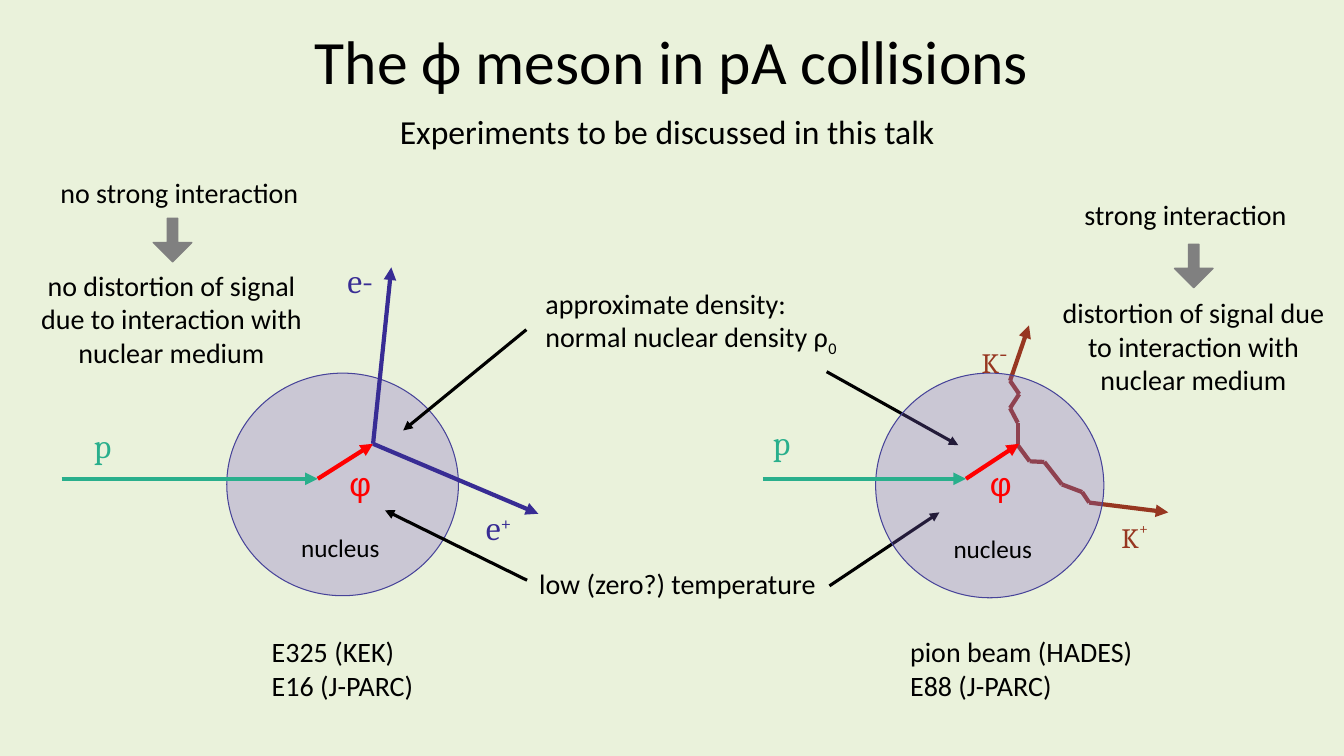
from lxml import etree
from pptx import Presentation
from pptx.dml.color import RGBColor
from pptx.enum import shapes, text
from pptx.oxml.ns import qn
from pptx.util import Pt

BLACK, RED, GRAY = "000000", "FF0000", "808080"
GREEN, BLUE, BROWN = "29AF8C", "382C94", "973721"
rgb = RGBColor.from_string

deck = Presentation()
deck.slide_width, deck.slide_height = Pt(960), Pt(540)
slide = deck.slides.add_slide(deck.slide_layouts[5])
slide.background.fill.solid()
slide.background.fill.fore_color.rgb = rgb("EAF2DB")


# Straight line, with an arrowhead at its end if wanted
def line(start, end, color, width=3, head=True):
    wire = slide.shapes.add_connector(
        shapes.MSO_CONNECTOR.STRAIGHT, *map(Pt, start + end))
    wire.line.color.rgb = rgb(color)
    wire.line.width = Pt(width)
    if head:
        tip = etree.SubElement(wire.line._get_or_add_ln(), qn("a:tailEnd"))
        tip.set("type", "triangle")
    etree.SubElement(wire._element.spPr, qn("a:effectLst"))


# Text box: each paragraph is a list of (text, size, baseline in percent)
def label(box, paras, color=BLACK, font="Calibri", wrap=True, center=False):
    frame = slide.shapes.add_textbox(*map(Pt, box)).text_frame
    frame.word_wrap = wrap
    frame.auto_size = text.MSO_AUTO_SIZE.SHAPE_TO_FIT_TEXT
    for i, runs in enumerate(paras):
        para = frame.add_paragraph() if i else frame.paragraphs[0]
        if center:
            para.alignment = text.PP_ALIGN.CENTER
        for words, size, base in runs:
            run = para.add_run()
            run.text = words
            run.font.name, run.font.size = font, Pt(size)
            run.font.color.rgb = rgb(color)
            if base:
                run.font._element.set("baseline", str(base * 1000))


# Title
title = slide.shapes.title
title.left, title.top, title.width, title.height = map(Pt, (25, 33, 910, 42))
para = title.text_frame.paragraphs[0]
para.alignment = text.PP_ALIGN.CENTER
para.line_spacing = Pt(30)
run = para.add_run()
run.text = "The ϕ meson in pA collisions"
run.font.name, run.font.size = "Calibri", Pt(44)
run.font.color.rgb = rgb(BLACK)
label((278.5, 75.5, 423, 36),
      [[("Experiments to be discussed in this talk", 24, 0)]])

# Arrows and kaon tracks that lie behind the right nucleus
line((592.5, 418.5), (671, 366), BLACK, 2.25)
line((590.5, 265.5), (684.5, 318), BLACK, 2.25)
tracks = [
    [(727, 317), (727, 302), (721.5, 291.5), (728, 281.5), (721.5, 272),
     (735, 232.5)],
    [(727, 318), (735.5, 329.5), (746, 330), (758.5, 346), (773, 351.5),
     (778, 359), (834.5, 366)],
]
for track in tracks:
    for i in range(len(track) - 1):
        line(track[i], track[i + 1], BROWN, head=i == len(track) - 2)

# Nuclei with the incoming proton and the meson
nuclei = [
    # ellipse, proton start, decay start, decay end, p, φ, name
    ((162, 266.5, 165.5, 159), 44, 227, 266.5, (60, 300), (242.5, 327),
     (208, 376.5)),
    ((625.5, 266.5, 163, 160.5), 545, 690, 728, (545, 297.5), (700, 327),
     (674, 377.5)),
]
for oval, start, hit, decay, p, phi, name in nuclei:
    ball = slide.shapes.add_shape(shapes.MSO_SHAPE.OVAL, *map(Pt, oval))
    ball.shadow.inherit = False
    ball.fill.solid()
    ball.fill.fore_color.rgb = rgb("7C60C6")
    tint = ball._element.spPr.find(qn("a:solidFill"))[0]
    etree.SubElement(tint, qn("a:alpha")).set("val", "29000")
    ball.line.color.rgb = rgb("474399")
    ball.line.width = Pt(0.75)
    line((start, 342), (hit, 342), GREEN)
    line((hit, 342), (decay, 317), RED)
    label(p + (45, 36), [[("p", 24, 0)]], GREEN, "Cambria", False)
    label(phi + (43, 36), [[("φ", 24, 0)]], RED, "Arial", False)
    label(name + (95, 27), [[("nucleus", 18, 0)]])

# Electron pair
for end in ((279.5, 191), (384.5, 367)):
    line((266.5, 317), end, BLUE)

# Particle names
names = [
    ((340, 358.5, 36.5, 36), [("e", 24, 0), ("+", 24, 30)], BLUE),
    ((241, 182, 34.5, 36), [("e-", 24, 0)], BLUE),
    ((794, 367, 47.5, 39), [("K", 20, 0), ("+", 20, 50)], BROWN),
    ((694, 231, 46, 41), [("K", 20, 0), ("-", 32, 24)], BROWN),
]
for box, runs, color in names:
    label(box, [runs], color, "Cambria", False)

# Arrows to the left nucleus
line((376.5, 414.5), (275, 364.5), BLACK, 2.25)
line((376, 235.5), (288, 307.5), BLACK, 2.25)

# Shared conditions
label((382.5, 201, 259, 55.5),
      [[("approximate density:", 20, 0)],
       [("normal nuclear density ρ", 20, 0), ("0", 20, -25)]])
label((378, 401, 259, 31.5), [[("low (zero?) temperature", 20, 0)]])

# Effect of the interaction, on each side
sides = [
    ((36, 121.5, 214.5, 31.5), "no strong interaction", (109.5, 156),
     (12.5, 188, 220, 80),
     "no distortion of signal due to interaction with nuclear medium"),
    ((767.5, 137.5, 167, 31.5), "strong interaction", (839, 174.5),
     (745, 207.5, 215, 80),
     "distortion of signal due to interaction with nuclear medium"),
]
for top, cause, spot, low, effect in sides:
    label(top, [[(cause, 20, 0)]])
    arrow = slide.shapes.add_shape(
        shapes.MSO_SHAPE.DOWN_ARROW, *map(Pt, spot + (27.5, 31)))
    arrow.shadow.inherit = False
    arrow.adjustments[0], arrow.adjustments[1] = 0.27, 0.5
    arrow.fill.solid()
    arrow.fill.fore_color.rgb = arrow.line.color.rgb = rgb(GRAY)
    arrow.line.width = Pt(1)
    label(low, [[(effect, 20, 0)]], center=True)

# Experiments
for left, width, rows in ((187, 157, ("E325 (KEK)", "E16 (J-PARC)")),
                          (643, 185, ("pion beam (HADES)", "E88 (J-PARC)"))):
    label((left, 450, width, 55.5), [[(row, 20, 0)] for row in rows])

deck.save("out.pptx")
